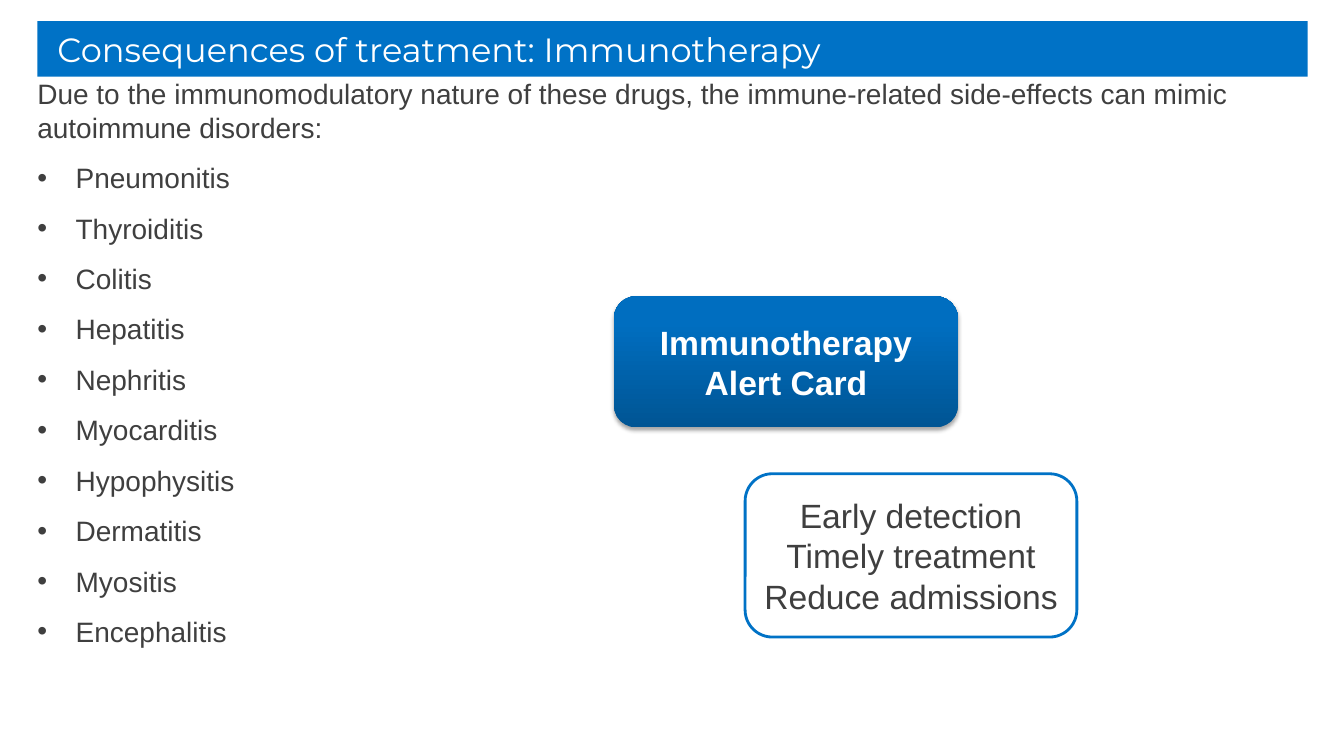
from copy import deepcopy
from lxml import etree
from pptx import Presentation
from pptx.dml.color import RGBColor
from pptx.enum.shapes import MSO_SHAPE
from pptx.enum.text import MSO_ANCHOR, PP_ALIGN
from pptx.oxml import parse_xml
from pptx.oxml.ns import nsdecls, qn
from pptx.util import Inches, Pt

COLORS = {"blue": "0072C6", "white": "FFFFFF", "text": "3F3F3F", "black": "000000",
          "deep": "005594", "mid": "006EC0", "light": "006FC1"}
EFFECTS = ["Pneumonitis", "Thyroiditis", "Colitis", "Hepatitis", "Nephritis",
           "Myocarditis", "Hypophysitis", "Dermatitis", "Myositis", "Encephalitis"]


def color(name):
    return RGBColor.from_string(COLORS[name])


def style(para, size, ink, face="Arial", bold=False):
    font = para.font
    font.size, font.name, font.bold = Pt(size), face, bold
    font.color.rgb = color(ink)


def add_box(slide, kind, box):
    shape = slide.shapes.add_shape(kind, *map(Inches, box))
    shape.shadow.inherit = False
    shape.line.fill.background()
    frame = shape.text_frame
    frame.word_wrap = True
    frame.vertical_anchor = MSO_ANCHOR.MIDDLE
    return shape


def set_inset(frame, inset=0):
    frame.margin_left = frame.margin_right = Inches(inset)
    frame.margin_top = frame.margin_bottom = Inches(inset)


def add_title(slide, box, text):
    shape = add_box(slide, MSO_SHAPE.RECTANGLE, box)
    shape.fill.solid()
    shape.fill.fore_color.rgb = color("blue")
    frame = shape.text_frame
    frame.margin_left = Inches(0.2)
    para = frame.paragraphs[0]
    para.text = text
    para.alignment = PP_ALIGN.LEFT
    style(para, 24, "white", "Montserrat")


def add_bullet(para):
    props = para._p.get_or_add_pPr()
    props.set("marL", str(Inches(0.38)))
    props.set("indent", str(-Inches(0.38)))
    etree.SubElement(props, qn("a:buFont")).set("typeface", "Arial")
    etree.SubElement(props, qn("a:buChar")).set("char", "•")


def add_body(slide, box, intro, items):
    frame = slide.shapes.add_textbox(*map(Inches, box)).text_frame
    frame.word_wrap = True
    set_inset(frame)
    for i, text in enumerate([intro, *items]):
        para = frame.add_paragraph() if i else frame.paragraphs[0]
        para.text = text
        para.space_after = Pt(6)
        if i:
            para.space_before = Pt(6)
            add_bullet(para)
        style(para, 20, "text")


def add_card(slide, box, lines, ink, bold=False):
    shape = add_box(slide, MSO_SHAPE.ROUNDED_RECTANGLE, box)
    frame = shape.text_frame
    set_inset(frame)
    for i, text in enumerate(lines):
        para = frame.add_paragraph() if i else frame.paragraphs[0]
        para.text = text
        para.alignment = PP_ALIGN.CENTER
        style(para, 24, ink, bold=bold)
    return shape


def add_alert(slide, box, text):
    shape = add_card(slide, box, [text], "white", True)
    fill = shape.fill
    fill.gradient()
    fill.gradient_angle = 90
    stops = shape._element.spPr.find(qn("a:gradFill")).find(qn("a:gsLst"))
    stops.append(deepcopy(stops[-1]))
    marks = [(0, "deep"), (0.8, "mid"), (1, "light")]
    for stop, (place, name) in zip(fill.gradient_stops, marks):
        stop.position = place
        stop.color.rgb = color(name)
    effects = shape._element.spPr.find(qn("a:effectLst"))
    effects.append(parse_xml(
        f'<a:outerShdw {nsdecls("a")} blurRad="{Pt(3.1)}" dist="{Pt(1.8)}" '
        f'dir="5400000" rotWithShape="0"><a:srgbClr val="{COLORS["black"]}">'
        '<a:alpha val="35000"/></a:srgbClr></a:outerShdw>'))


def add_goals(slide, box, lines):
    shape = add_card(slide, box, lines, "text")
    shape.fill.solid()
    shape.fill.fore_color.rgb = color("white")
    shape.line.color.rgb = color("blue")
    shape.line.width = Pt(2)


def main():
    deck = Presentation()
    deck.slide_width, deck.slide_height = Inches(13.33), Inches(7.5)
    slide = deck.slides.add_slide(deck.slide_layouts[6])
    add_title(slide, (0.37, 0.21, 12.6, 0.55), "Consequences of treatment: Immunotherapy")
    add_body(slide, (0.37, 0.76, 12.6, 6.14),
             "Due to the immunomodulatory nature of these drugs, the immune-related "
             "side-effects can mimic autoimmune disorders:", EFFECTS)
    add_alert(slide, (6.09, 2.94, 3.41, 1.3), "Immunotherapy Alert Card")
    add_goals(slide, (7.39, 4.7, 3.29, 1.62),
              ["Early detection", "Timely treatment", "Reduce admissions"])
    deck.save("out.pptx")


if __name__ == "__main__":
    main()
